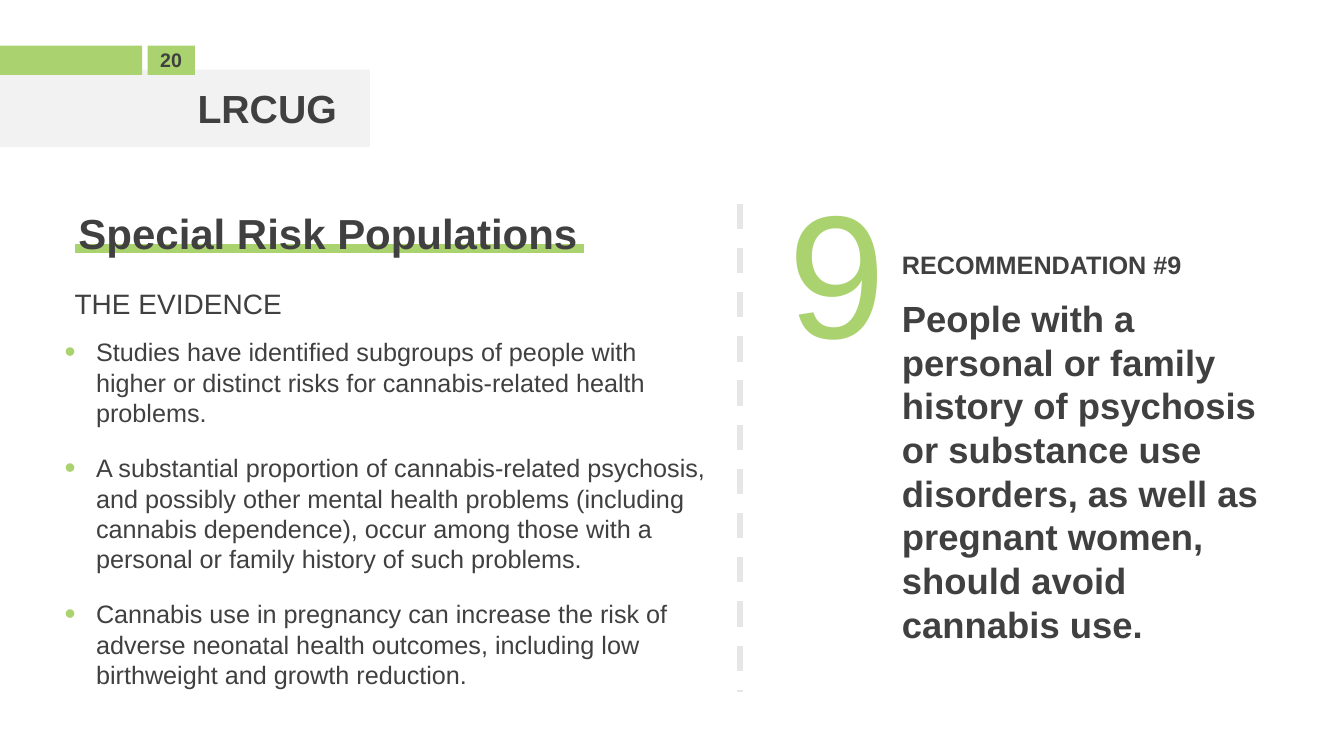
from lxml import etree
from pptx import Presentation
from pptx.dml.color import RGBColor
from pptx.enum import dml, shapes, text
from pptx.oxml.ns import qn
from pptx.util import Pt

GREEN, INK, PALE, DIVIDER = "AAD26F", "414041", "F2F2F2", "E7E6E6"
EVIDENCE = [
    "Studies have identified subgroups of people with higher or distinct risks "
    "for cannabis-related health problems.",
    "A substantial proportion of cannabis-related psychosis, and possibly other "
    "mental health problems (including cannabis dependence), occur among those "
    "with a personal or family history of such problems.",
    "Cannabis use in pregnancy can increase the risk of adverse neonatal health "
    "outcomes, including low birthweight and growth reduction.",
]
RECOMMENDATION = (
    "People with a personal or family history of psychosis or substance use "
    "disorders, as well as pregnant women, should avoid cannabis use."
)


def rgb(value):
    return RGBColor.from_string(value)


class SlideBuilder:
    font = "Arial"

    def __init__(self, slide):
        self.slide = slide

    def bar(self, left, top, width, height, color):
        shape = self.slide.shapes.add_shape(
            shapes.MSO_SHAPE.RECTANGLE, Pt(left), Pt(top), Pt(width), Pt(height))
        shape.shadow.inherit = False
        shape.fill.solid()
        shape.fill.fore_color.rgb = rgb(color)
        shape.line.fill.background()

    def line(self, x1, y1, x2, y2, color, weight, dash=None):
        connector = self.slide.shapes.add_connector(
            shapes.MSO_CONNECTOR.STRAIGHT, Pt(x1), Pt(y1), Pt(x2), Pt(y2))
        connector.line.color.rgb = rgb(color)
        connector.line.width = Pt(weight)
        if dash:
            connector.line.dash_style = dash
        etree.SubElement(connector._element.spPr, qn("a:effectLst"))

    def box(self, left, top, width, height, paragraphs, inset=True,
            anchor=text.MSO_ANCHOR.TOP, grow=True):
        """Add a text box; each paragraph is a dict of arguments for set_paragraph()."""
        shape = self.slide.shapes.add_textbox(Pt(left), Pt(top), Pt(width), Pt(height))
        frame = shape.text_frame
        frame.word_wrap = True
        frame.vertical_anchor = anchor
        frame.auto_size = (text.MSO_AUTO_SIZE.SHAPE_TO_FIT_TEXT if grow
                           else text.MSO_AUTO_SIZE.NONE)
        if not inset:
            frame.margin_left = frame.margin_right = 0
            frame.margin_top = frame.margin_bottom = 0
        for index, options in enumerate(paragraphs):
            paragraph = frame.add_paragraph() if index else frame.paragraphs[0]
            self.set_paragraph(paragraph, **options)

    def set_paragraph(self, paragraph, words, size, bold=False, color=INK, align=None,
                      before=None, line_height=None, bullet=False):
        paragraph.text = words
        paragraph.alignment = align
        if before:
            paragraph.space_before = Pt(before)
        if line_height:
            paragraph.line_spacing = Pt(line_height)
        if bullet:
            self.add_bullet(paragraph)
        for run in paragraph.runs:
            run.font.name = self.font
            run.font.size = Pt(size)
            run.font.bold = bold
            run.font.color.rgb = rgb(color)

    def add_bullet(self, paragraph):
        properties = paragraph._p.get_or_add_pPr()
        indent = Pt(22.5)
        properties.set("marL", str(indent))
        properties.set("indent", str(-indent))
        bullet_color = etree.SubElement(properties, qn("a:buClr"))
        etree.SubElement(bullet_color, qn("a:srgbClr"), val=GREEN)
        etree.SubElement(properties, qn("a:buSzPct"), val="125000")
        etree.SubElement(properties, qn("a:buFont"), typeface=self.font)
        etree.SubElement(properties, qn("a:buChar"), char="•")


def main():
    presentation = Presentation()
    presentation.slide_width, presentation.slide_height = Pt(960), Pt(540)
    builder = SlideBuilder(presentation.slides.add_slide(presentation.slide_layouts[6]))
    right, center = text.PP_ALIGN.RIGHT, text.PP_ALIGN.CENTER
    middle = text.MSO_ANCHOR.MIDDLE

    # Header
    builder.bar(0, 49.7, 264.2, 55.4, PALE)
    builder.box(15.8, 56.9, 231.8, 41,
                [dict(words="LRCUG", size=28, bold=True, align=right)], anchor=middle)
    builder.bar(0, 32.6, 101.5, 20.9, GREEN)
    builder.bar(105.4, 32.6, 33.8, 20.9, GREEN)
    builder.box(105.4, 31, 33.8, 24.5,
                [dict(words="20", size=14, bold=True, align=center)])

    # Evidence
    builder.line(53.3, 177.6, 416.9, 177.6, GREEN, 6)
    builder.box(49, 144.7, 391, 43.9,
                [dict(words="Special Risk Populations", size=30, bold=True)])
    builder.box(53.3, 204.5, 395.3, 24.5,
                [dict(words="THE EVIDENCE", size=20)], inset=False)
    builder.box(46.1, 240.5, 461.5, 265.7,
                [dict(words=words, size=18, before=18, bullet=True) for words in EVIDENCE],
                inset=False, grow=False)

    # Recommendation
    builder.line(528.5, 145.6, 528.5, 494, DIVIDER, 4.5, dml.MSO_LINE.DASH)
    builder.box(555.8, 113, 111.6, 158.4, [dict(words="9", size=125, color=GREEN)])
    builder.box(637.2, 112.3, 280.1, 405.4, [
        dict(words="RECOMMENDATION #9", size=18, bold=True, line_height=30.5),
        dict(words=RECOMMENDATION, size=26, bold=True, before=12),
    ], anchor=middle, grow=False)

    presentation.save("out.pptx")


if __name__ == "__main__":
    main()
